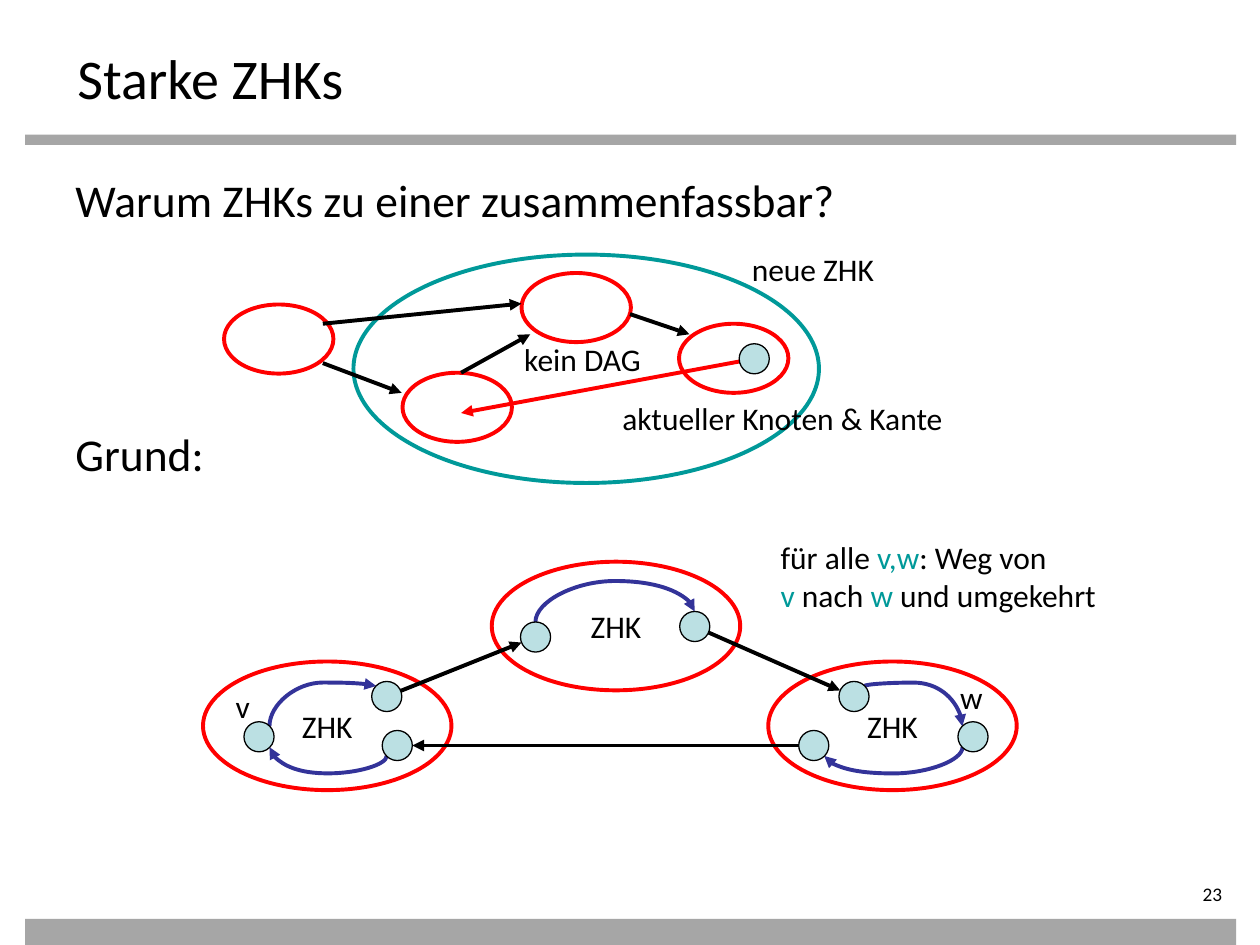
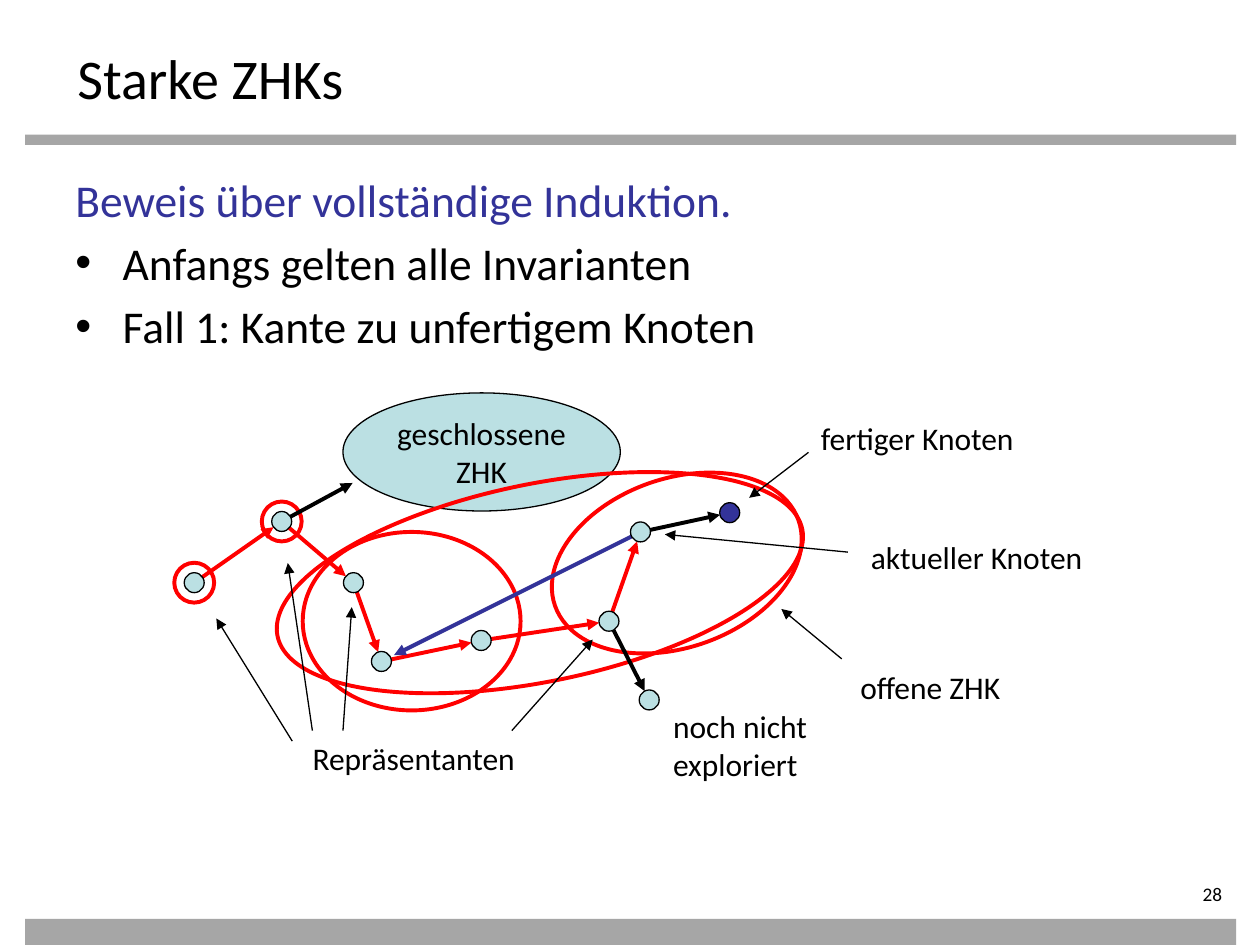
from math import hypot

from lxml import etree
from pptx import Presentation
from pptx.dml.color import RGBColor
from pptx.enum.shapes import MSO_CONNECTOR, MSO_SHAPE
from pptx.enum.text import MSO_ANCHOR, MSO_AUTO_SIZE, PP_ALIGN
from pptx.oxml.ns import qn
from pptx.util import Pt

RECT, OVAL = MSO_SHAPE.RECTANGLE, MSO_SHAPE.OVAL
STRAIGHT, CURVE = MSO_CONNECTOR.STRAIGHT, MSO_CONNECTOR.CURVE
TOP, MIDDLE = MSO_ANCHOR.TOP, MSO_ANCHOR.MIDDLE
NO_FIT, GROW = MSO_AUTO_SIZE.NONE, MSO_AUTO_SIZE.SHAPE_TO_FIT_TEXT
LEFT, CENTER, RIGHT = PP_ALIGN.LEFT, PP_ALIGN.CENTER, PP_ALIGN.RIGHT
BLACK, GREY, RED = "000000", "A6A6A6", "FF0000"
TEAL, BLUE, PALE = "009999", "333399", "BBE0E3"
FONT = "Calibri"
THICK, THIN = 2.25, 0.75


def paint(fill, color):
    fill.solid()
    fill.fore_color.rgb = RGBColor.from_string(color)


def write(p, text, size=18, color=BLACK, align=LEFT):
    p.alignment = align
    for i, line in enumerate(text.split("\n")):
        if i:
            p.add_line_break()
        if line:
            r = p.add_run()
            r.text = line
            r.font.name = FONT
            r.font.size = Pt(size)
            paint(r.font.fill, color)


small_rings = [(128, 174), (298, 156), (230, 213), (388, 185)]
large_rings = [(439, 378), (281, 321), (116, 378)]

slides = [
    {
        "number": "23",
        "body": [
            ("Warum ZHKs zu einer zusammenfassbar?", BLACK, False, 0),
            ("Grund:", BLACK, False, 114.5),
        ],
        "rings": [(x, y, 62.5, 39.5, 0, RED, "") for x, y in small_rings]
        + [(x, y, 142, 73.5, 0, RED, "ZHK") for x, y in large_rings]
        + [(202, 145.5, 266, 130.5, 0, TEAL, "")],
        "radius": 8.6,
        "points": {
            "p": (431, 205), "v": (148, 421), "w": (556, 421),
            "a": (221, 398), "b": (227, 426), "c": (306, 364),
            "d": (397, 358), "e": (488, 398), "f": (465, 426),
            "A": (184.5, 185), "B": (298, 173.5), "C": (360, 179.5),
            "D": (394, 191), "E": (263.5, 213), "F": (303, 191),
            "G": (184.5, 207.5), "H": (229.5, 224.5), "I": (263.5, 236),
        },
        "dark": "",
        "ringed": "",
        "arrows": [
            (BLACK, THICK, 8.6, "AB CD EF GH ac de fb"),
            (RED, THICK, 0, "pI"),
        ],
        "curves": [
            ("cd", 332, 0), ("ew", 390, 6), ("wf", 442, 6),
            ("va", 390, 6), ("bv", 442, 6),
        ],
        "labels": [
            (348.5, 224.5, 214, [("aktueller Knoten & Kante", BLACK)]),
            (422.5, 139.5, 96, [("neue ZHK", BLACK)]),
            (292.5, 191, 92, [("kein DAG", BLACK)]),
            (127.5, 389, 24, [("v", BLACK)]),
            (541.5, 384, 27, [("w", BLACK)]),
            (439, 304, 210, [
                ("für alle ", BLACK), ("v,w", TEAL), (": Weg von\n", BLACK),
                ("v", TEAL), (" nach ", BLACK), ("w", TEAL),
                (" und umgekehrt", BLACK),
            ]),
        ],
    },
    {
        "number": "28",
        "body": [
            ("Beweis über vollständige Induktion.", BLUE, False, 0),
            ("Anfangs gelten alle Invarianten", BLACK, True, 5),
            ("Fall 1: Kante zu unfertigem Knoten", BLACK, True, 5),
        ],
        "rings": [
            (196, 224.5, 158.5, 67.5, 0, BLACK, "geschlossene\nZHK"),
            (173, 304, 124.5, 102, 0, RED, ""),
            (313, 273.5, 147.5, 96.5, 340.6, RED, ""),
            (155.5, 276.5, 306, 113, 348.5, RED, ""),
        ],
        "radius": 5.7,
        "points": {
            "a": (111, 333), "b": (161, 298), "c": (202, 333),
            "d": (218, 378), "e": (275, 366), "f": (348, 355),
            "g": (366, 304), "h": (417, 293), "i": (371, 400),
            "Z": (201.5, 276), "A": (167, 423.5), "B": (178.5, 417.5),
            "C": (196, 417.5), "F": (292.5, 417.5), "G": (484.5, 315.5),
            "H": (462, 258.5), "O": (481, 376.5), "R": (446.5, 348),
        },
        "dark": "h",
        "ringed": "ab",
        "arrows": [
            (RED, THICK, 5.7, "ab bc cd de ef fg"),
            (BLACK, THICK, 5.7, "bZ gh fi"),
            (BLUE, THICK, 8, "gd"),
            (BLACK, THIN, 24, "Aa Bb"),
            (BLACK, THIN, 14, "Cc Ff Gg Hh OR"),
        ],
        "curves": [],
        "labels": [
            (171.5, 419, 142, [("Repräsentanten", BLACK)]),
            (484.5, 378, 106, [("offene ZHK", BLACK)]),
            (490.5, 304, 145, [("aktueller Knoten", BLACK)]),
            (377.5, 400.5, 96, [("noch nicht\nexploriert", BLACK)]),
            (462, 236, 132, [("fertiger Knoten", BLACK)]),
        ],
    },
]

prs = Presentation()
prs.slide_width, prs.slide_height = Pt(720), Pt(540)

for page in slides:
    s = prs.slides.add_slide(prs.slide_layouts[5])
    points, radius = page["points"], page["radius"]

    for y, h in [(77, 5.75), (525, 15)]:
        sp = s.shapes.add_shape(RECT, Pt(14.4), Pt(y), Pt(692), Pt(h))
        sp.shadow.inherit = False
        paint(sp.fill, GREY)
        sp.line.fill.background()

    title = s.shapes.title
    title.left, title.top, title.width, title.height = Pt(37), Pt(21), Pt(648), Pt(39.5)
    tf = title.text_frame
    tf.auto_size = NO_FIT
    tf.vertical_anchor = TOP
    write(tf.paragraphs[0], "Starke ZHKs", size=32)

    tf = s.shapes.add_textbox(Pt(626.5), Pt(504), Pt(79), Pt(16)).text_frame
    tf.word_wrap = True
    tf.margin_left = tf.margin_top = tf.margin_bottom = 0
    write(tf.paragraphs[0], page["number"], size=11, align=RIGHT)

    tf = s.shapes.add_textbox(Pt(36), Pt(94.5), Pt(648), Pt(391)).text_frame
    tf.word_wrap = True
    for i, (text, color, bullet, gap) in enumerate(page["body"]):
        p = tf.add_paragraph() if i else tf.paragraphs[0]
        p.space_before = Pt(gap)
        if bullet:
            pPr = p._p.get_or_add_pPr()
            pPr.set("marL", str(Pt(27)))
            pPr.set("indent", str(-Pt(27)))
            etree.SubElement(pPr, qn("a:buFont")).set("typeface", "Arial")
            etree.SubElement(pPr, qn("a:buChar")).set("char", "•")
        write(p, text, size=26, color=color)

    rings = list(page["rings"])
    for name in page["ringed"]:
        x, y = points[name]
        d = 4 * radius
        rings.append((x - d / 2, y - d / 2, d, d, 0, RED, ""))
    for x, y, w, h, rotation, color, text in rings:
        sp = s.shapes.add_shape(OVAL, Pt(x), Pt(y), Pt(w), Pt(h))
        sp.shadow.inherit = False
        sp.rotation = rotation
        paint(sp.line.fill, color)
        if color == BLACK:
            paint(sp.fill, PALE)
            sp.line.width = Pt(THIN)
        else:
            sp.fill.background()
            sp.line.width = Pt(THICK)
        if text:
            tf = sp.text_frame
            tf.word_wrap = False
            tf.vertical_anchor = MIDDLE
            write(tf.paragraphs[0], text, align=CENTER)

    connectors = []
    for color, width, gap, pairs in page["arrows"]:
        for start, end in pairs.split():
            (x1, y1), (x2, y2) = points[start], points[end]
            length = hypot(x2 - x1, y2 - y1)
            dx, dy = (x2 - x1) / length, (y2 - y1) / length
            near = radius if start.islower() else 0
            far = gap if end.islower() else 0
            c = s.shapes.add_connector(
                STRAIGHT, Pt(x1 + near * dx), Pt(y1 + near * dy),
                Pt(x2 - far * dx), Pt(y2 - far * dy))
            connectors.append((c, color, width))
    for (start, end), level, inset in page["curves"]:
        (x1, y1), (x2, y2) = points[start], points[end]
        side = inset if x2 > x1 else -inset
        rise = inset or radius
        rise = rise if level > y1 else -rise
        x1, x2, y1, y2 = x1 + side, x2 - side, y1 + rise, y2 + rise
        w, h = abs(y2 - y1), abs(x2 - x1)
        x, y = (x1 + x2 - w) / 2, (y1 + y2 - h) / 2
        c = s.shapes.add_connector(CURVE, Pt(x), Pt(y), Pt(x + w), Pt(y + h))
        spPr = c._element.spPr
        xfrm = spPr.find(qn("a:xfrm"))
        xfrm.set("rot", str((90 if y2 > y1 else 270) * 60000))
        if (x2 > x1) == (y2 > y1):
            xfrm.set("flipV", "1")
        bend = round((level - y1) / (y2 - y1) * 100000)
        avLst = spPr.find(qn("a:prstGeom")).get_or_add_avLst()
        gd = etree.SubElement(avLst, qn("a:gd"))
        gd.set("name", "adj1")
        gd.set("fmla", f"val {bend}")
        connectors.append((c, BLUE, THICK))
    for c, color, width in connectors:
        paint(c.line.fill, color)
        c.line.width = Pt(width)
        spPr = c._element.spPr
        etree.SubElement(spPr.find(qn("a:ln")), qn("a:tailEnd")).set("type", "triangle")
        etree.SubElement(spPr, qn("a:effectLst"))

    for name, (x, y) in points.items():
        if name.islower():
            sp = s.shapes.add_shape(
                OVAL, Pt(x - radius), Pt(y - radius), Pt(2 * radius), Pt(2 * radius))
            sp.shadow.inherit = False
            paint(sp.fill, BLUE if name in page["dark"] else PALE)
            paint(sp.line.fill, BLACK)
            sp.line.width = Pt(THIN)

    for x, y, w, runs in page["labels"]:
        rows = 1 + sum(text.count("\n") for text, color in runs)
        h = 7.2 + 21.6 * rows
        tf = s.shapes.add_textbox(Pt(x), Pt(y), Pt(w), Pt(h)).text_frame
        tf.word_wrap = False
        tf.auto_size = GROW
        for text, color in runs:
            write(tf.paragraphs[0], text, color=color)

prs.save("out.pptx")
